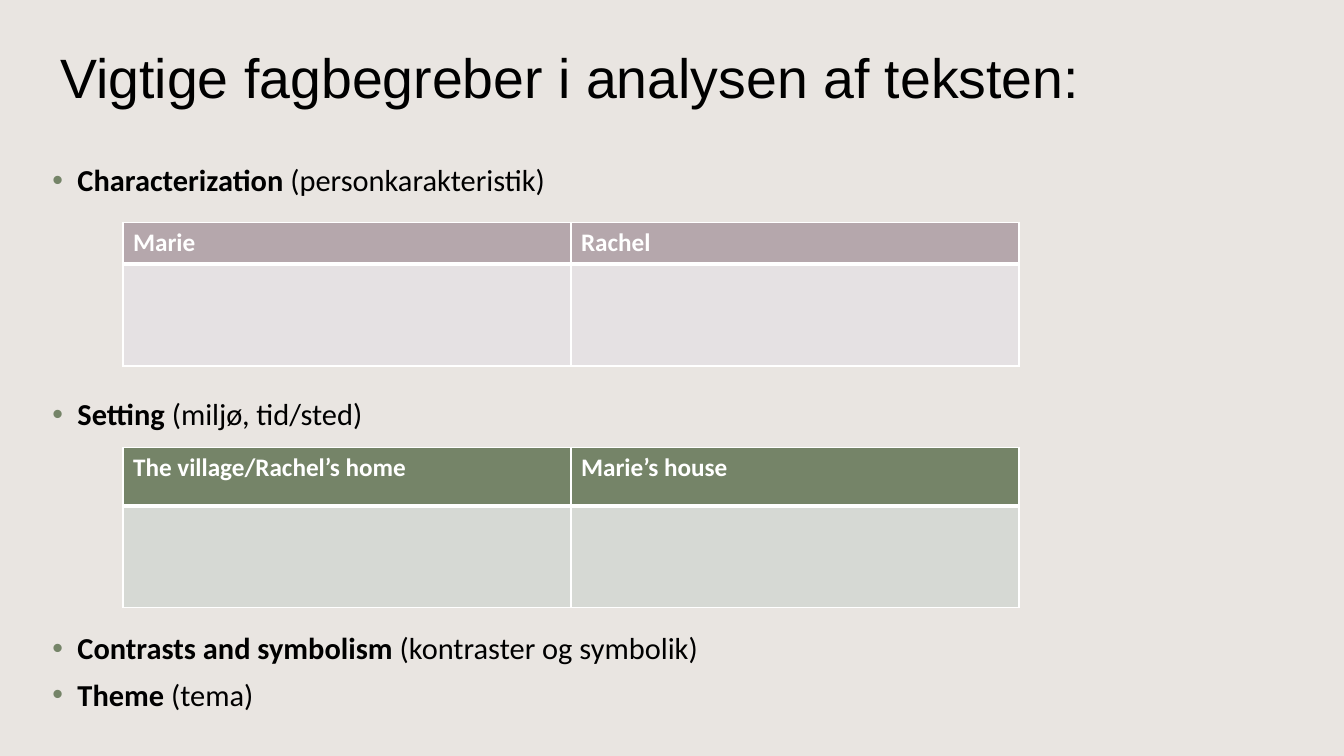
"""Build the slide of key terms for analysing the text."""
from lxml.etree import SubElement
from pptx import Presentation
from pptx.dml.color import RGBColor
from pptx.enum.text import MSO_ANCHOR
from pptx.oxml.ns import qn
from pptx.util import Inches, Pt

SLIDE_WIDTH, SLIDE_HEIGHT = Inches(13.33), Inches(7.5)
SAND = RGBColor(0xE9, 0xE5, 0xE1)
BLACK = RGBColor(0, 0, 0)
WHITE = RGBColor(0xFF, 0xFF, 0xFF)
MAUVE = RGBColor(0xB5, 0xA7, 0xAC)
PALE_MAUVE = RGBColor(0xE5, 0xE1, 0xE3)
GREEN = RGBColor(0x75, 0x84, 0x68)
PALE_GREEN = RGBColor(0xD6, 0xD9, 0xD4)

TABLE_LEFT, TABLE_WIDTH, NOTES_HEIGHT = 9.15, 66.67, 13.47
LINE_GAP, TABLE_GAP = 10, 143.6
TERMS = [
    ("Characterization", " (personkarakteristik)", 0),
    ("Setting", " (miljø, tid/sted)", TABLE_GAP),
    ("Contrasts and symbolism", " (kontraster og symbolik)", TABLE_GAP),
    ("Theme", " (tema)", LINE_GAP),
]


def across(percent):
    """Return a share of the slide's width."""
    return round(SLIDE_WIDTH * percent / 100)


def down(percent):
    """Return a share of the slide's height."""
    return round(SLIDE_HEIGHT * percent / 100)


def set_font(font, name, size, color):
    """Set the typeface, size and colour of a font."""
    font.name, font.size = name, Pt(size)
    font.color.rgb = color


def add_text_frame(slide, left, top, width, height):
    """Add a wrapping text box and return its frame."""
    box = slide.shapes.add_textbox(across(left), down(top), across(width), down(height))
    box.text_frame.word_wrap = True
    return box.text_frame


def add_title(slide, wording):
    """Add the heading of the slide."""
    frame = add_text_frame(slide, 3.75, 5.33, 89.4, 9.47)
    frame.vertical_anchor = MSO_ANCHOR.MIDDLE
    heading = frame.paragraphs[0]
    heading.text = wording
    set_font(heading.font, "Arial", 39.6, BLACK)


def add_bullet(paragraph):
    """Give a paragraph a hanging green bullet."""
    properties = paragraph._p.get_or_add_pPr()
    properties.set("marL", str(Inches(0.25)))
    properties.set("indent", str(-Inches(0.25)))
    color = SubElement(properties, qn("a:buClr"))
    SubElement(color, qn("a:srgbClr"), val=str(GREEN))
    SubElement(properties, qn("a:buFont"), typeface="Arial")
    SubElement(properties, qn("a:buChar"), char="•")


def add_terms(slide):
    """Add the bulleted terms, leaving room for the tables."""
    frame = add_text_frame(slide, 3.15, 21.2, 92.5, 76.13)
    for index, (term, translation, gap) in enumerate(TERMS):
        paragraph = frame.add_paragraph() if index else frame.paragraphs[0]
        add_bullet(paragraph)
        paragraph.line_spacing = 0.9
        paragraph.space_before = Pt(gap)
        set_font(paragraph.font, "Calibri", 21.7, BLACK)
        for wording, bold in ((term, True), (translation, False)):
            run = paragraph.add_run()
            run.text = wording
            run.font.bold = bold


def add_borders(cell, **widths):
    """Draw white cell borders of the given widths in points."""
    properties = cell._tc.get_or_add_tcPr()
    for side in "LRTB":
        line = SubElement(properties, qn(f"a:ln{side}"), w=str(Pt(widths.get(side, 1))))
        fill = SubElement(line, qn("a:solidFill"))
        SubElement(fill, qn("a:srgbClr"), val=str(WHITE))


def add_comparison(slide, top, header_height, headers, header_color, notes_color):
    """Add a table with a header row over empty cells for notes."""
    table = slide.shapes.add_table(
        2, len(headers), across(TABLE_LEFT), down(top),
        across(TABLE_WIDTH), down(header_height + NOTES_HEIGHT)).table
    for row, height in zip(table.rows, (header_height, NOTES_HEIGHT)):
        row.height = down(height)
    for column, wording in enumerate(headers):
        header, notes = table.cell(0, column), table.cell(1, column)
        add_borders(header, B=3)
        add_borders(notes, T=3)
        for cell, color in ((header, header_color), (notes, notes_color)):
            cell.fill.solid()
            cell.fill.fore_color.rgb = color
        header.text = wording
        font = header.text_frame.paragraphs[0].font
        set_font(font, "Calibri", 18, WHITE)
        font.bold = True


def main():
    """Build and save the slide."""
    deck = Presentation()
    deck.slide_width, deck.slide_height = SLIDE_WIDTH, SLIDE_HEIGHT
    slide = deck.slides.add_slide(deck.slide_layouts[6])
    slide.background.fill.solid()
    slide.background.fill.fore_color.rgb = SAND
    add_title(slide, "Vigtige fagbegreber i analysen af teksten:")
    add_terms(slide)
    add_comparison(slide, 29.47, 5.47, ("Marie", "Rachel"), MAUVE, PALE_MAUVE)
    add_comparison(slide, 59.2, 7.73, ("The village/Rachel’s home", "Marie’s house"),
                   GREEN, PALE_GREEN)
    deck.save("out.pptx")


if __name__ == "__main__":
    main()
